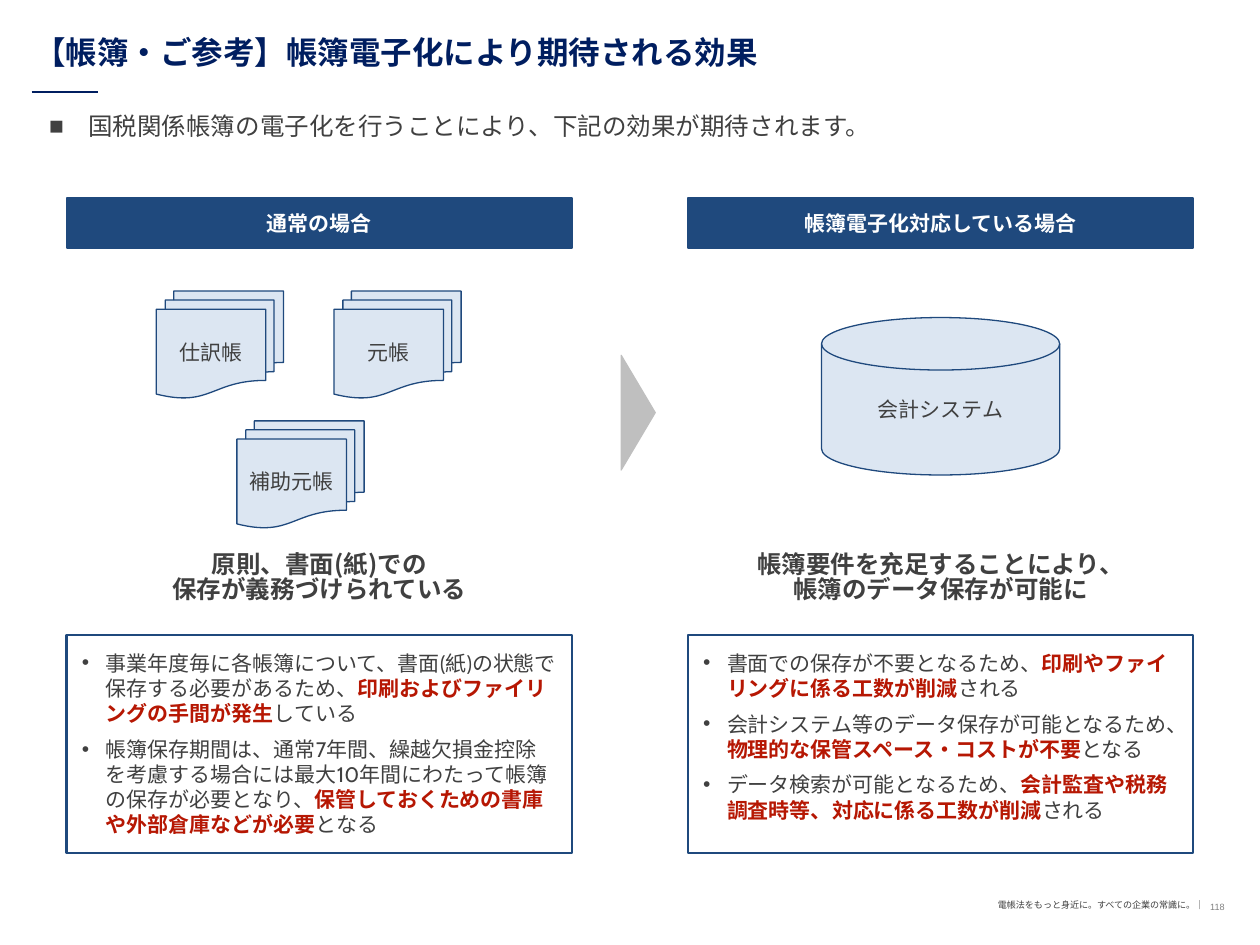
from lxml.etree import SubElement
from pptx import Presentation
from pptx.dml.color import RGBColor
from pptx.enum.shapes import MSO_CONNECTOR as CONN, MSO_SHAPE as SHAPE
from pptx.enum.text import MSO_ANCHOR as ANCHOR, MSO_AUTO_SIZE as AUTO, PP_ALIGN as ALIGN
from pptx.oxml.ns import qn
from pptx.util import Inches, Pt

NAVY = RGBColor(0x00, 0x1E, 0x60)
BLUE = RGBColor(0x1F, 0x49, 0x7D)
PALE = RGBColor(0xDC, 0xE6, 0xF2)
TEXT = RGBColor(0x40, 0x40, 0x40)
RED = RGBColor(0xB6, 0x17, 0x03)
GRAY = RGBColor(0x80, 0x80, 0x80)
SILVER = RGBColor(0xBF, 0xBF, 0xBF)
WHITE = RGBColor(0xFF, 0xFF, 0xFF)
NOTO, CABIN, ARIAL = "Noto Sans CJK JP", "Cabin", "Arial"
HOT = {"color": RED, "bold": True}


class SlideBuilder:
    """Holds the style and the current slide."""

    def __init__(self, slide):
        self.s = slide

    def place(self, sp, box):
        sp.left, sp.top, sp.width, sp.height = map(Inches, box)

    def frame(self, sp, anchor=ANCHOR.TOP, inset=(0.1, 0.05, 0.1, 0.05)):
        tf = sp.text_frame
        tf.word_wrap, tf.auto_size = True, AUTO.NONE
        tf.vertical_anchor = anchor
        tf.margin_left, tf.margin_top, tf.margin_right, tf.margin_bottom = map(Inches, inset)
        return tf

    def run(self, p, text, size, font=NOTO, color=TEXT, bold=False):
        r = p.add_run()
        r.text = text
        f = r.font
        f.name, f.size, f.bold = font, Pt(size), bold
        f.color.rgb = color
        SubElement(f._element, qn("a:ea")).set("typeface", font)

    def fill_text(self, tf, paragraphs, size, align=ALIGN.LEFT, bullet=None, indent=0,
                  gap=0, spacing=None, **style):
        """Each paragraph is a list of (text, style changes) runs."""
        for i, runs in enumerate(paragraphs):
            p = tf.paragraphs[0] if i == 0 else tf.add_paragraph()
            if bullet:
                pPr = p._p.get_or_add_pPr()
                pPr.set("marL", str(Inches(indent)))
                pPr.set("indent", str(-Inches(indent)))
                SubElement(pPr, qn("a:buFont")).set("typeface", ARIAL)
                SubElement(pPr, qn("a:buChar")).set("char", bullet)
            p.alignment = align
            p.space_before = Pt(gap if i else 0)
            if spacing:
                p.line_spacing = spacing
            for text, changes in runs:
                self.run(p, text, size, **{**style, **changes})

    def placeholder(self, index, box, text, size, **style):
        sp = self.s.placeholders[index]
        self.place(sp, box)
        self.fill_text(self.frame(sp), [[(text, {})]], size, spacing=0.87, **style)

    def text(self, box, lines, size, anchor=ANCHOR.TOP, inset=(0.1, 0.05, 0.1, 0.05), **style):
        sp = self.s.shapes.add_textbox(*map(Inches, box))
        self.fill_text(self.frame(sp, anchor, inset), [[(t, {})] for t in lines], size, **style)

    def shape(self, kind, box, fill, line, width):
        sp = self.s.shapes.add_shape(kind, *map(Inches, box))
        sp.shadow.inherit = False
        if fill is None:
            sp.fill.background()
        else:
            sp.fill.solid()
            sp.fill.fore_color.rgb = fill
        sp.line.color.rgb = line
        sp.line.width = Pt(width)
        return sp

    def label(self, kind, box, text, fill=PALE, width=0.75, **style):
        sp = self.shape(kind, box, fill, BLUE, width)
        self.fill_text(self.frame(sp, ANCHOR.MIDDLE), [[(text, {})]], 12, ALIGN.CENTER, **style)

    def bullet_box(self, box, paragraphs):
        sp = self.shape(SHAPE.RECTANGLE, box, None, BLUE, 1.5)
        self.fill_text(self.frame(sp, inset=(0.12,) * 4), paragraphs, 12, bullet="•",
                       indent=0.19, gap=6, font=CABIN)

    def rule(self, x1, y1, x2, y2, color):
        c = self.s.shapes.add_connector(CONN.STRAIGHT, *map(Inches, (x1, y1, x2, y2)))
        c.line.color.rgb = color
        c.line.width = Pt(1)
        SubElement(c._element.spPr, qn("a:effectLst"))


COLUMNS = [
    (0.53, "通常の場合", ["原則、書面(紙)での", "保存が義務づけられている"], [
        [("事業年度毎に各帳簿について、書面(紙)の状態で保存する必要があるため、", {}),
         ("印刷およびファイリングの手間が発生", HOT), ("している", {})],
        [("帳簿保存期間は、通常7年間、繰越欠損金控除を考慮する場合には最大10年間に"
          "わたって帳簿の保存が必要となり、", {}),
         ("保管しておくための書庫や外部倉庫などが必要", HOT), ("となる", {})],
    ]),
    (5.46, "帳簿電子化対応している場合",
     ["帳簿要件を充足することにより、", "帳簿のデータ保存が可能に"], [
        [("書面での保存が不要となるため、", {}),
         ("印刷やファイリングに係る工数が削減", HOT), ("される", {})],
        [("会計システム等のデータ保存が可能となるため、", {}),
         ("物理的な保管スペース・コストが不要", HOT), ("となる", {})],
        [("データ検索が可能となるため、", {}),
         ("会計監査や税務調査時等、", {**HOT, "font": ARIAL}),
         ("対応に係る工数が削減", HOT), ("される", {})],
    ]),
]
LEDGERS = [(1.24, 2.31, "仕訳帳"), (2.65, 2.31, "元帳"), (1.88, 3.34, "補助元帳")]
COLUMN_W = 4.01


def main():
    prs = Presentation()
    prs.slide_width, prs.slide_height = Inches(10), Inches(7.5)
    b = SlideBuilder(prs.slides.add_slide(prs.slide_layouts[1]))

    # Title and lead sentence
    b.placeholder(0, (0.17, 0.25, 9.83, 0.49), "【帳簿・ご参考】帳簿電子化により期待される効果",
                  18, color=NAVY, bold=True)
    b.rule(0.25, 0.73, 0.78, 0.73, NAVY)
    b.placeholder(1, (0.29, 0.86, 9.63, 0.57),
                  "国税関係帳簿の電子化を行うことにより、下記の効果が期待されます。",
                  14, bullet="■", indent=0.31)

    # Paper ledgers, arrow and accounting system
    for x, y, name in LEDGERS:
        b.label(SHAPE.FLOWCHART_MULTIDOCUMENT, (x, y, 1.01, 0.85), name)
    arrow = b.shape(SHAPE.ISOSCELES_TRIANGLE, (4.61, 3.14, 0.91, 0.27), SILVER, SILVER, 0.75)
    arrow.rotation = 90
    b.label(SHAPE.FLOWCHART_MAGNETIC_DISK, (6.52, 2.52, 1.89, 1.25), "会計システム")

    # Two columns: heading, summary, details
    for x, heading, summary, details in COLUMNS:
        b.label(SHAPE.RECTANGLE, (x, 1.57, COLUMN_W, 0.4), heading, fill=BLUE, width=1,
                font=CABIN, color=WHITE, bold=True)
        b.text((x, 4.35, COLUMN_W, 0.57), summary, 14, align=ALIGN.CENTER, bold=True,
               spacing=0.83)
        b.bullet_box((x, 5.04, COLUMN_W, 1.73), details)

    # Footer
    b.text((7.76, 7.1, 1.9, 0.19), ["電帳法をもっと身近に。すべての企業の常識に。｜"], 5.2,
           align=ALIGN.RIGHT, spacing=0.87)
    b.text((9.31, 7.08, 0.56, 0.24), ["118"], 5.2, ANCHOR.MIDDLE, (0, 0, 0.15, 0),
           align=ALIGN.RIGHT, font=ARIAL, color=GRAY)

    prs.save("out.pptx")


if __name__ == "__main__":
    main()
